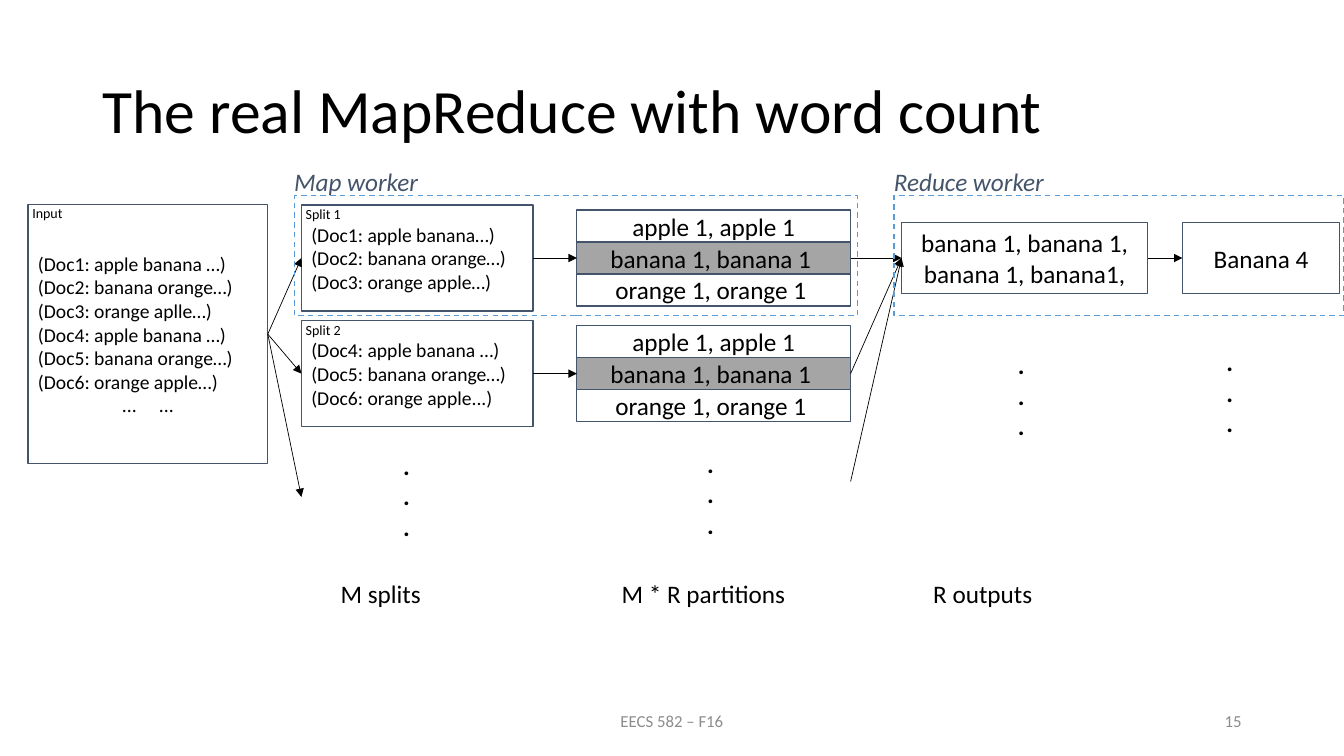
from lxml import etree
from pptx import Presentation
from pptx.dml.color import RGBColor
from pptx.enum.dml import MSO_LINE_DASH_STYLE as Dash
from pptx.enum.shapes import MSO_CONNECTOR as Connector, MSO_SHAPE as Shape
from pptx.enum.text import MSO_ANCHOR as Anchor, MSO_AUTO_SIZE as AutoSize, PP_ALIGN as Align
from pptx.oxml.ns import qn
from pptx.util import Pt

BLACK = RGBColor(0x00, 0x00, 0x00)
SLATE = RGBColor(0x44, 0x54, 0x6A)
GRAY = RGBColor(0xA5, 0xA5, 0xA5)
FOOTER_GRAY = RGBColor(0x8C, 0x8C, 0x8C)
BLUE = RGBColor(0x5B, 0x9B, 0xD5)

TOP, RIGHT, LEFT = 0, 3, 1  # connection sites of a rectangle
ROW_CENTER, ROW_STEP = 184.3, 82.6
SPLIT_LEFT, SPLIT_WIDTH, SPLIT_HEIGHT = 215.3, 165.6, 75.6
PARTITION_LEFT, PARTITION_WIDTH, PARTITION_HEIGHT = 412, 195.6, 22.8
REDUCE_HEIGHT = 51.1

SPLITS = [
    ["(Doc1: apple banana…)", "(Doc2: banana orange…)", "(Doc3: orange apple…)"],
    ["(Doc4: apple banana …)", "(Doc5: banana orange…)", "(Doc6: orange apple...)"],
]
INPUT_LINES = [
    "(Doc1: apple banana …)", "(Doc2: banana orange…)", "(Doc3: orange aplle…)",
    "(Doc4: apple banana …)", "(Doc5: banana orange…)", "(Doc6: orange apple…)",
]
PARTITIONS = ["apple 1, apple 1", "banana 1, banana 1 ", "orange 1, orange 1 "]


class Diagram:
    """Holds the slide and the shared style."""

    font = "Calibri"

    def __init__(self, slide):
        self.slide = slide

    def run(self, paragraph, text, size, color=BLACK, bold=None, italic=None):
        run = paragraph.add_run()
        run.text = text
        font = run.font
        font.name, font.size, font.bold, font.italic = self.font, Pt(size), bold, italic
        font.color.rgb = color
        return run

    def lines(self, shape, lines, size, align=Align.LEFT, anchor=Anchor.MIDDLE, **style):
        frame = shape.text_frame
        frame.word_wrap = True
        frame.vertical_anchor = anchor
        for index, line in enumerate(lines):
            paragraph = frame.add_paragraph() if index else frame.paragraphs[0]
            paragraph.alignment = align
            self.run(paragraph, line, size, **style)

    def title(self, text, left, top, width, height):
        title = self.slide.shapes.title
        title.left, title.top, title.width, title.height = map(Pt, (left, top, width, height))
        self.lines(title, [text], 44)
        title.text_frame.auto_size = AutoSize.NONE
        title.text_frame.paragraphs[0].line_spacing = 0.9

    def text(self, lines, left, top, width, height, size=18, anchor=Anchor.TOP, **style):
        box = self.slide.shapes.add_textbox(*map(Pt, (left, top, width, height)))
        self.lines(box, lines, size, anchor=anchor, **style)

    def box(self, lines, left, top, width, height, size=18, align=Align.CENTER,
            fill=None, line=SLATE, dash=None):
        box = self.slide.shapes.add_shape(Shape.RECTANGLE, *map(Pt, (left, top, width, height)))
        box.shadow.inherit = False
        if fill is None:
            box.fill.background()
        else:
            box.fill.solid()
            box.fill.fore_color.rgb = fill
        box.line.color.rgb = line
        box.line.width = Pt(1)
        if dash is not None:
            box.line.dash_style = dash
        self.lines(box, lines, size, align)
        return box

    def labeled_box(self, label, lines, left, top, width, height):
        box = self.box(lines, left, top, width, height, size=14, align=Align.LEFT)
        self.text([label], left - 4, top - 3.3, 62, 19.4, size=10)
        return box

    def arrow(self, start, end):
        """Draw an arrow between two ends, each a box or an (x, y) point."""
        begin_point = start if isinstance(start, tuple) else (0, 0)
        end_point = end if isinstance(end, tuple) else (0, 0)
        arrow = self.slide.shapes.add_connector(
            Connector.STRAIGHT, *map(Pt, begin_point + end_point))
        if not isinstance(start, tuple):
            arrow.begin_connect(start, RIGHT)
        if not isinstance(end, tuple):
            arrow.end_connect(end, LEFT)
        arrow.line.color.rgb = BLACK
        arrow.line.width = Pt(0.5)
        etree.SubElement(arrow.line._get_or_add_ln(), qn("a:tailEnd"), type="triangle")
        etree.SubElement(arrow._element.spPr, qn("a:effectLst"))


def main():
    presentation = Presentation()
    presentation.slide_width, presentation.slide_height = Pt(960), Pt(540)
    diagram = Diagram(presentation.slides.add_slide(presentation.slide_layouts[5]))

    diagram.title("The real MapReduce with word count", 66, 28.8, 828, 104.4)
    diagram.text(["EECS 582 – F16"], 318, 500.5, 324, 28.8, size=12,
                 anchor=Anchor.MIDDLE, align=Align.CENTER, color=FOOTER_GRAY)
    diagram.text(["15"], 678, 500.5, 216, 28.8, size=12,
                 anchor=Anchor.MIDDLE, align=Align.RIGHT, color=FOOTER_GRAY)

    input_box = diagram.labeled_box("Input", INPUT_LINES, 20, 146.2, 171.3, 185)
    ellipses = input_box.text_frame.add_paragraph()
    ellipses.alignment = Align.CENTER
    diagram.run(ellipses, "...", 14)
    gap = diagram.run(ellipses, " ", 14)
    gap.font._element.set("spc", "1260")
    diagram.run(ellipses, "...", 14)

    reduce_top = ROW_CENTER - REDUCE_HEIGHT / 2
    reduce_box = diagram.box(["banana 1, banana 1, banana 1, banana1,"],
                             644, reduce_top, 175.8, REDUCE_HEIGHT)
    output_box = diagram.box(["Banana 4"], 844.6, reduce_top, 112.3, REDUCE_HEIGHT)
    diagram.arrow(reduce_box, output_box)

    for row, documents in enumerate(SPLITS):
        center = ROW_CENTER + row * ROW_STEP
        split = diagram.labeled_box(f"Split {row + 1}", documents, SPLIT_LEFT,
                                    center - SPLIT_HEIGHT / 2, SPLIT_WIDTH, SPLIT_HEIGHT)
        partitions = [
            diagram.box([words], PARTITION_LEFT, center + (index - 1.5) * PARTITION_HEIGHT,
                        PARTITION_WIDTH, PARTITION_HEIGHT, fill=GRAY if index == 1 else None)
            for index, words in enumerate(PARTITIONS)
        ]
        diagram.arrow(input_box, split)
        diagram.arrow(split, partitions[1])
        diagram.arrow(partitions[1], reduce_box)
    diagram.arrow(input_box, (SPLIT_LEFT, 355))
    diagram.arrow((PARTITION_LEFT + PARTITION_WIDTH, 344), reduce_box)

    for left, top in [(280.8, 318.2), (498, 316.8), (720, 246.2), (869, 244.1)]:
        diagram.text(["."] * 3, left, top, 23, 72.7, bold=True)

    for label, left, width in [("Map worker", 210.2, 402.5), ("Reduce worker", 638.6, 321.4)]:
        diagram.box([], left, 139.7, width, 85.7, line=BLUE, dash=Dash.DASH)
        diagram.text([label], left - 7.2, 115.6, 126, 29, color=SLATE, italic=True)

    for caption, left in [("M splits", 236.2), ("M * R partitions", 437), ("R outputs", 659.5)]:
        diagram.text([caption], left, 409.7, 144.7, 29)

    presentation.save("out.pptx")


if __name__ == "__main__":
    main()
